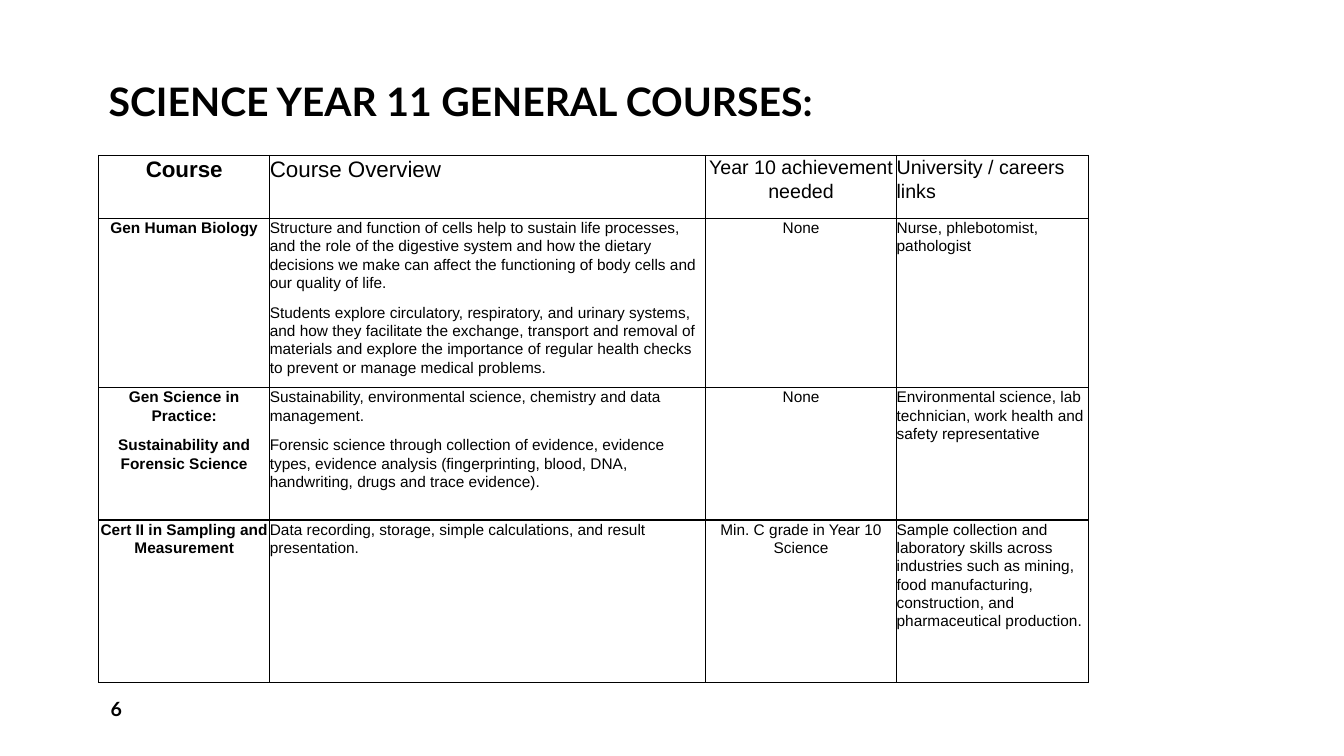
from lxml import etree
from pptx import Presentation
from pptx import util as u
from pptx.dml.color import RGBColor
from pptx.enum import text
from pptx.oxml import ns

PX = 9525  # 96 px to the inch
BLACK = RGBColor(0, 0, 0)
WHITE = RGBColor(255, 255, 255)
HEADING_FONT = "Lato"
TABLE_FONT = "Arial"

COLUMN_WIDTHS = [163, 415, 182, 183]
ROW_HEIGHTS = [60, 150, 126, 155]
HEADER_SIZES = [16, 16, 14, 14]
BODY_SIZE = 11
CENTRED_COLUMNS = (0, 2)

# Each cell is a list of paragraphs
COURSES = [
    [["Course"], ["Course Overview"], ["Year 10 achievement needed"],
     ["University / careers links"]],
    [["Gen Human Biology"],
     ["Structure and function of cells help to sustain life processes, and the role of "
      "the digestive system and how the dietary decisions we make can affect the "
      "functioning of body cells and our quality of life.",
      "Students explore circulatory, respiratory, and urinary systems, and how they "
      "facilitate the exchange, transport and removal of materials and explore the "
      "importance of regular health checks to prevent or manage medical problems."],
     ["None"],
     ["Nurse, phlebotomist, pathologist"]],
    [["Gen Science in Practice:", "Sustainability and Forensic Science"],
     ["Sustainability, environmental science, chemistry and data management.",
      "Forensic science through collection of evidence, evidence types, evidence "
      "analysis (fingerprinting, blood, DNA, handwriting, drugs and trace evidence)."],
     ["None"],
     ["Environmental science, lab technician, work health and safety representative"]],
    [["Cert II in Sampling and Measurement"],
     ["Data recording, storage, simple calculations, and result presentation."],
     ["Min. C grade in Year 10 Science"],
     ["Sample collection and laboratory skills across industries such as mining, food "
      "manufacturing, construction, and pharmaceutical production."]],
]


def px(*lengths):
    return [u.Emu(length * PX) for length in lengths]


def set_font(paragraph, name, size, bold):
    font = paragraph.font
    font.name, font.size, font.bold = name, u.Pt(size), bold
    font.color.rgb = BLACK


def add_heading(slide, box, words, size, anchor, line_spacing=1.0):
    frame = slide.shapes.add_textbox(*px(*box)).text_frame
    frame.word_wrap = True
    frame.vertical_anchor = anchor
    paragraph = frame.paragraphs[0]
    paragraph.text = words
    paragraph.line_spacing = line_spacing
    set_font(paragraph, HEADING_FONT, size, True)


def add_borders(cell):
    properties = cell._tc.get_or_add_tcPr()
    for position, side in enumerate(("lnL", "lnR", "lnT", "lnB")):
        line = etree.Element(ns.qn(f"a:{side}"), w=str(u.Pt(1)))
        fill = etree.SubElement(line, ns.qn("a:solidFill"))
        etree.SubElement(fill, ns.qn("a:srgbClr"), val=str(BLACK))
        properties.insert(position, line)


def fill_cell(cell, paragraphs, size, bold, centred):
    cell.fill.solid()
    cell.fill.fore_color.rgb = WHITE
    cell.margin_left = cell.margin_right = cell.margin_top = cell.margin_bottom = 0
    add_borders(cell)
    cell.text = "\n".join(paragraphs)
    for paragraph in cell.text_frame.paragraphs:
        paragraph.alignment = text.PP_ALIGN.CENTER if centred else text.PP_ALIGN.LEFT
        paragraph.line_spacing = 1.07
        paragraph.space_after = u.Pt(8)
        set_font(paragraph, TABLE_FONT, size, bold)


def add_course_table(slide, left, top):
    box = px(left, top, sum(COLUMN_WIDTHS), sum(ROW_HEIGHTS))
    table = slide.shapes.add_table(len(ROW_HEIGHTS), len(COLUMN_WIDTHS), *box).table
    table.first_row = table.horz_banding = False
    for column, width in zip(table.columns, px(*COLUMN_WIDTHS)):
        column.width = width
    for row, height in zip(table.rows, px(*ROW_HEIGHTS)):
        row.height = height
    for i, course in enumerate(COURSES):
        for j, paragraphs in enumerate(course):
            size = HEADER_SIZES[j] if i == 0 else BODY_SIZE
            fill_cell(table.cell(i, j), paragraphs, size, j == 0, j in CENTRED_COLUMNS)


def main():
    presentation = Presentation()
    presentation.slide_width, presentation.slide_height = px(1280, 720)
    slide = presentation.slides.add_slide(presentation.slide_layouts[6])

    # Title
    add_heading(slide, (94, 8, 1092, 116), "SCIENCE YEAR 11 GENERAL COURSES:", 28,
                text.MSO_ANCHOR.BOTTOM, 0.9)
    # Courses
    add_course_table(slide, 94, 148)
    # Slide number
    add_heading(slide, (96, 656, 280, 38), "6", 14, text.MSO_ANCHOR.MIDDLE)

    presentation.save("out.pptx")


if __name__ == "__main__":
    main()
